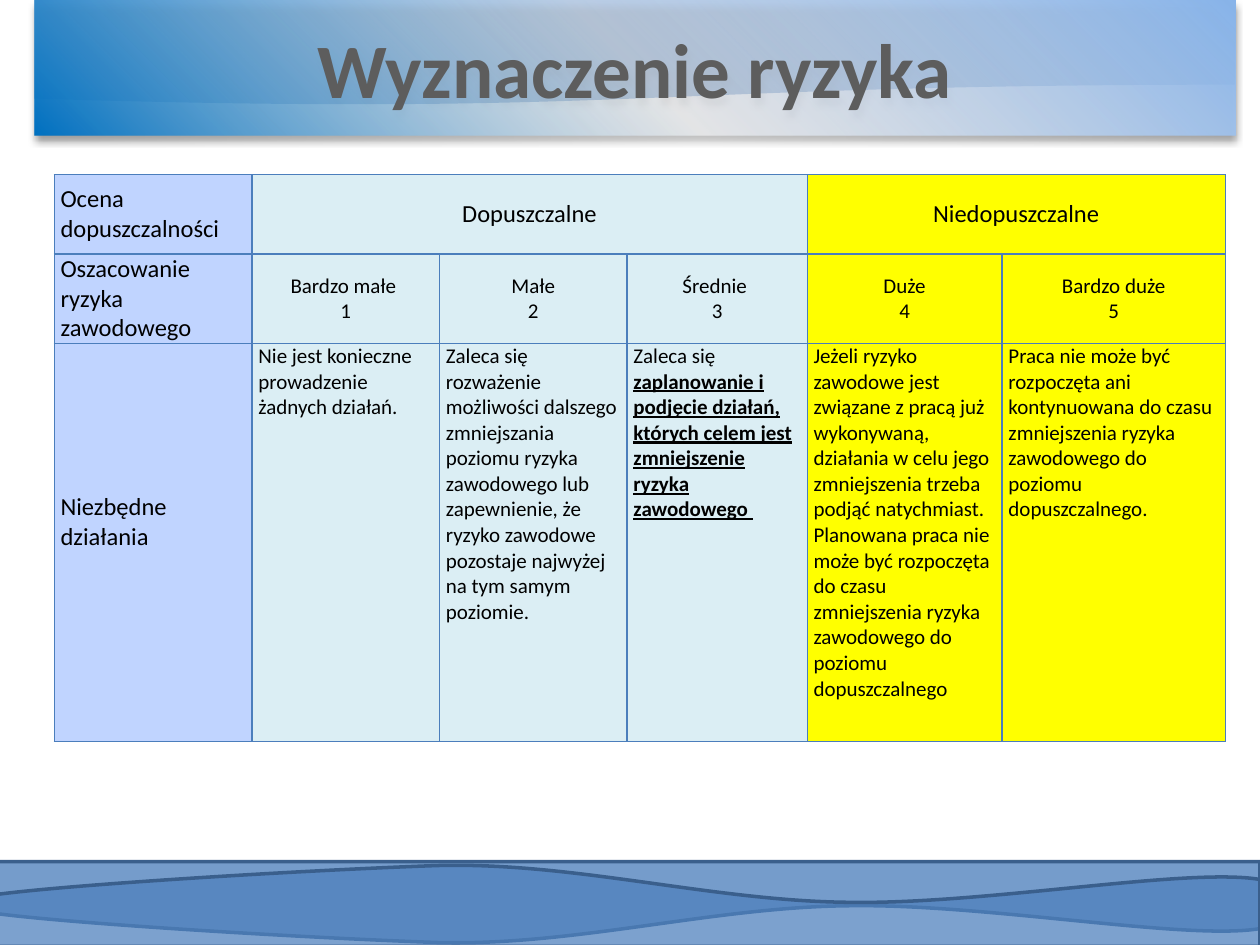
"""Builds the "Wyznaczenie ryzyka" slide with its risk assessment table."""
from lxml import etree
from pptx import Presentation
from pptx.dml.color import RGBColor
from pptx.enum.shapes import MSO_SHAPE
from pptx.enum.text import MSO_ANCHOR, PP_ALIGN
from pptx.oxml import parse_xml
from pptx.oxml.ns import nsdecls, qn
from pptx.util import Cm, Pt

LEFT, CENTER = PP_ALIGN.LEFT, PP_ALIGN.CENTER
TOP, MIDDLE = MSO_ANCHOR.TOP, MSO_ANCHOR.MIDDLE
DOCUMENT = MSO_SHAPE.FLOWCHART_DOCUMENT
COLORS = {
    "wave": "4F81BD", "wave_line": "3A5F8C", "title": "5D5D5D", "text": "000000",
    "label": "C0D4FF", "allowed": "DBEEF4", "forbidden": "FFFF00", "border": "4B7EBC",
    "band_start": "0070C0", "band_middle": "F9FBFE", "band_end": "87B3E9",
}


def rgb(name):
    return RGBColor.from_string(COLORS[name])


def format_object(target, values):
    for name, value in values.items():
        setattr(target, name, value)


prs = Presentation()
format_object(prs, {"slide_width": Cm(25.4), "slide_height": Cm(19.05)})
slide = prs.slides.add_slide(prs.slide_layouts[5])

wave_corners = [(-0.08, 17.37), (25.4, 17.37), (25.4, 18.72)]
wave_curves = [
    (23.93, 18.97), (19.86, 18.21), (17.09, 18.26),
    (14.33, 18.29), (11.56, 19.08), (8.79, 19.0),
    (5.99, 18.9), (1.47, 18.62), (-0.05, 18.42),
]
mirror_sum = 36.45
for mirrored, opacity in ((False, 78), (True, 74)):
    outline = [(Cm(x), Cm(mirror_sum - y if mirrored else y))
               for x, y in wave_corners + wave_curves]
    builder = slide.shapes.build_freeform(*outline[0])
    builder.add_line_segments(outline[1:], close=True)
    wave = builder.convert_to_shape()
    curve_steps = list(wave._element.spPr.iter(qn("a:lnTo")))[len(wave_corners) - 1:][:9]
    for start in range(0, len(wave_curves), 3):
        curve = etree.Element(qn("a:cubicBezTo"))
        curve_steps[start].addprevious(curve)
        for step in curve_steps[start:start + 3]:
            curve.append(step[0])
            step.getparent().remove(step)
    wave.shadow.inherit = False
    wave.fill.solid()
    wave.fill.fore_color.rgb = rgb("wave")
    wave_color = wave._element.spPr.find(qn("a:solidFill"))[0]
    etree.SubElement(wave_color, qn("a:alpha"), val=str(opacity * 1000))
    wave.line.color.rgb = rgb("wave_line")
    wave.line.width = Pt(2)

header_wave = slide.shapes.add_shape(DOCUMENT, Cm(0.7), 0, Cm(24.2), Cm(2.13))
header_wave.shadow.inherit = False
header_wave.fill.solid()
header_wave.fill.fore_color.rgb = rgb("wave")
header_wave.line.fill.background()

title = slide.shapes.title
slide.shapes._spTree.append(title._element)
format_object(title, {"left": Cm(0.7), "top": 0, "width": Cm(24.2), "height": Cm(2.73)})
title._element.spPr.append(parse_xml(
    f'<a:gradFill {nsdecls("a")} rotWithShape="1"><a:gsLst>'
    f'<a:gs pos="0"><a:srgbClr val="{COLORS["band_start"]}"/></a:gs>'
    f'<a:gs pos="50000"><a:srgbClr val="{COLORS["band_middle"]}">'
    '<a:alpha val="62000"/></a:srgbClr></a:gs>'
    f'<a:gs pos="100000"><a:srgbClr val="{COLORS["band_end"]}"/></a:gs>'
    '</a:gsLst><a:lin ang="18900000" scaled="0"/></a:gradFill>'))
title._element.spPr.append(parse_xml(
    f'<a:effectLst {nsdecls("a")}><a:outerShdw blurRad="50800" dist="38100" dir="5400000" '
    f'rotWithShape="0"><a:srgbClr val="{COLORS["text"]}"><a:alpha val="40000"/></a:srgbClr>'
    '</a:outerShdw></a:effectLst>'))
title.text_frame.text = "Wyznaczenie ryzyka"
title.text_frame.vertical_anchor = MIDDLE
heading = title.text_frame.paragraphs[0]
heading.alignment = CENTER
format_object(heading.runs[0].font, {"name": "Calibri", "size": Pt(44), "bold": True})
heading.runs[0].font.color.rgb = rgb("title")

column_widths = [3.99, 3.78, 3.78, 3.63, 3.93, 4.5]
row_heights = [1.6, 1.8, 8.03]
column_fills = ["label"] + ["allowed"] * 3 + ["forbidden"] * 2
rows = [
    ["Ocena dopuszczalności", "Dopuszczalne", "", "", "Niedopuszczalne", ""],
    ["Oszacowanie ryzyka zawodowego", "Bardzo małe \n1", "Małe\n2", "Średnie \n3",
     "Duże\n4", "Bardzo duże\n5"],
    ["Niezbędne\ndziałania",
     "Nie jest konieczne prowadzenie żadnych działań.",
     "Zaleca się rozważenie możliwości dalszego zmniejszania poziomu ryzyka zawodowego "
     "lub zapewnienie, że ryzyko zawodowe pozostaje najwyżej na tym samym poziomie.",
     "Zaleca się |zaplanowanie i podjęcie działań, których celem jest zmniejszenie "
     "ryzyka zawodowego ",
     "Jeżeli ryzyko zawodowe jest związane z pracą już wykonywaną, działania w celu jego "
     "zmniejszenia trzeba podjąć natychmiast. Planowana praca nie może być rozpoczęta do "
     "czasu zmniejszenia ryzyka zawodowego do poziomu dopuszczalnego",
     "Praca nie może być rozpoczęta ani kontynuowana do czasu zmniejszenia ryzyka "
     "zawodowego do poziomu dopuszczalnego."],
]
risk_table = slide.shapes.add_table(
    len(rows), len(column_widths), Cm(1.09), Cm(3.52),
    Cm(sum(column_widths)), Cm(sum(row_heights))).table
format_object(risk_table, {"first_row": False, "horz_banding": False})
for column, width in zip(risk_table.columns, column_widths):
    column.width = Cm(width)
for table_row, height in zip(risk_table.rows, row_heights):
    table_row.height = Cm(height)
for first, last in ((1, 3), (4, 5)):
    risk_table.cell(0, first).merge(risk_table.cell(0, last))

for row_index, row in enumerate(rows):
    for column_index, content in enumerate(row):
        is_label = column_index == 0
        is_action = row_index == 2
        cell = risk_table.cell(row_index, column_index)
        format_object(cell, {
            "margin_left": Cm(0.13), "margin_right": Cm(0.13), "margin_bottom": 0,
            "margin_top": Cm(3) if is_label and is_action else 0,
            "vertical_anchor": TOP if is_action else MIDDLE})
        cell.fill.solid()
        cell.fill.fore_color.rgb = rgb(column_fills[column_index])
        for position, side in enumerate(("lnL", "lnR", "lnT", "lnB")):
            cell._tc.get_or_add_tcPr().insert(position, parse_xml(
                f'<a:{side} {nsdecls("a")} w="9525"><a:solidFill>'
                f'<a:srgbClr val="{COLORS["border"]}"/></a:solidFill></a:{side}>'))
        for line_index, line in enumerate(content.split("\n")):
            frame = cell.text_frame
            paragraph = frame.add_paragraph() if line_index else frame.paragraphs[0]
            paragraph.alignment = LEFT if is_label or is_action else CENTER
            size = Pt(14) if is_label or row_index == 0 else Pt(12)
            paragraph.font.size = size
            for part_index, part in enumerate(line.split("|")):
                if part:
                    emphasised = part_index == 1
                    run = paragraph.add_run()
                    run.text = part
                    format_object(run.font, {"name": "Calibri", "size": size,
                                             "bold": emphasised, "underline": emphasised})
                    run.font.color.rgb = rgb("text")

prs.save("out.pptx")
